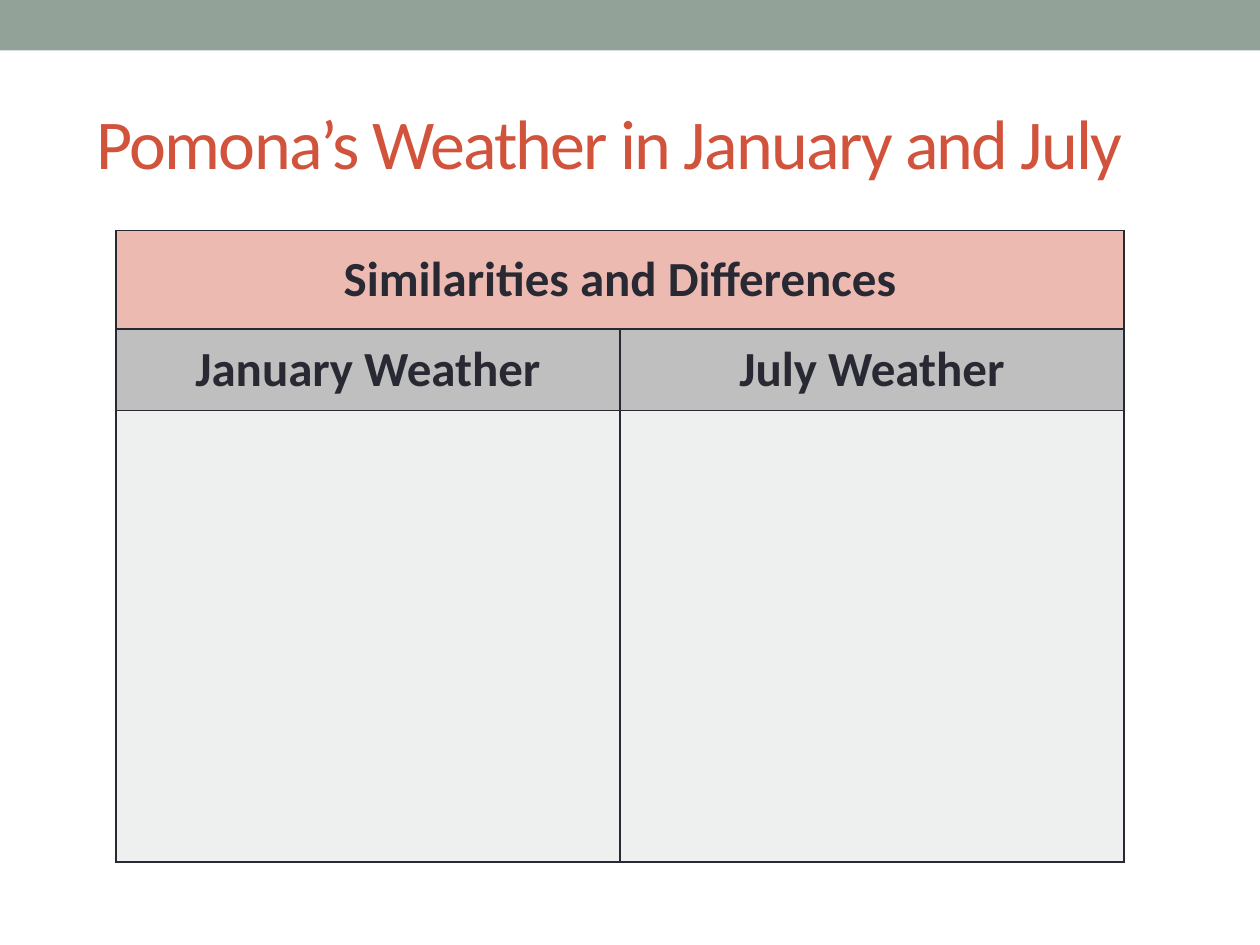
from pptx import Presentation
from pptx.dml.color import RGBColor
from pptx.enum.shapes import MSO_SHAPE
from pptx.enum.text import MSO_ANCHOR, PP_ALIGN
from pptx.oxml import parse_xml
from pptx.oxml.ns import nsdecls
from pptx.util import Inches, Pt

RECT = MSO_SHAPE.RECTANGLE
TOP, MIDDLE = MSO_ANCHOR.TOP, MSO_ANCHOR.MIDDLE
CENTER = PP_ALIGN.CENTER
INK = "292934"


def rgb(value):
    return RGBColor.from_string(value)


def add_run(p, text, size, color, bold=False):
    r = p.add_run()
    r.text = text
    for name, value in {"name": "Calibri", "size": Pt(size), "bold": bold}.items():
        setattr(r.font, name, value)
    r.font.color.rgb = rgb(color)
    return r


prs = Presentation()
prs.slide_width, prs.slide_height = Inches(10), Inches(7.5)
s = prs.slides.add_slide(prs.slide_layouts[6])

# Top band
band = s.shapes.add_shape(RECT, 0, 0, prs.slide_width, Inches(0.4))
band.shadow.inherit = False
band.fill.solid()
band.fill.fore_color.rgb = rgb("93A299")
band.line.fill.background()

# Title
title = s.shapes.add_textbox(Inches(0.67), Inches(0.58), Inches(8.83), Inches(1.08))
tf = title.text_frame
tf.word_wrap = True
tf.vertical_anchor = MIDDLE
r = add_run(tf.paragraphs[0], "Pomona’s Weather in January and July", 40, "D2533C")
r.font._element.set("spc", "-100")

# Comparison table: heading, column names, space for answers
rows = [
    (0.78, "EDBAB1", TOP, ["Similarities and Differences", ""]),
    (0.65, "BFBFBF", MIDDLE, ["January Weather", "July Weather"]),
    (3.58, "EEF0EF", TOP, ["", ""]),
]
height = sum(row[0] for row in rows)
table = s.shapes.add_table(
    len(rows), 2, Inches(0.92), Inches(1.83), Inches(8), Inches(height)
).table
table.cell(0, 0).merge(table.cell(0, 1))

for i, (row_height, fill, anchor, texts) in enumerate(rows):
    table.rows[i].height = Inches(row_height)
    for j, text in enumerate(texts):
        cell = table.cell(i, j)
        cell.vertical_anchor = anchor
        tcPr = cell._tc.get_or_add_tcPr()
        for side in ("lnL", "lnR", "lnT", "lnB"):
            tcPr.append(parse_xml(
                f'<a:{side} {nsdecls("a")} w="{Pt(1)}"><a:solidFill>'
                f'<a:srgbClr val="{INK}"/></a:solidFill></a:{side}>'
            ))
        cell.fill.solid()
        cell.fill.fore_color.rgb = rgb(fill)
        if text:
            p = cell.text_frame.paragraphs[0]
            p.alignment = CENTER
            add_run(p, text, 28, INK, bold=True)
table.cell(0, 0).margin_top = Inches(0.15)

prs.save("out.pptx")
